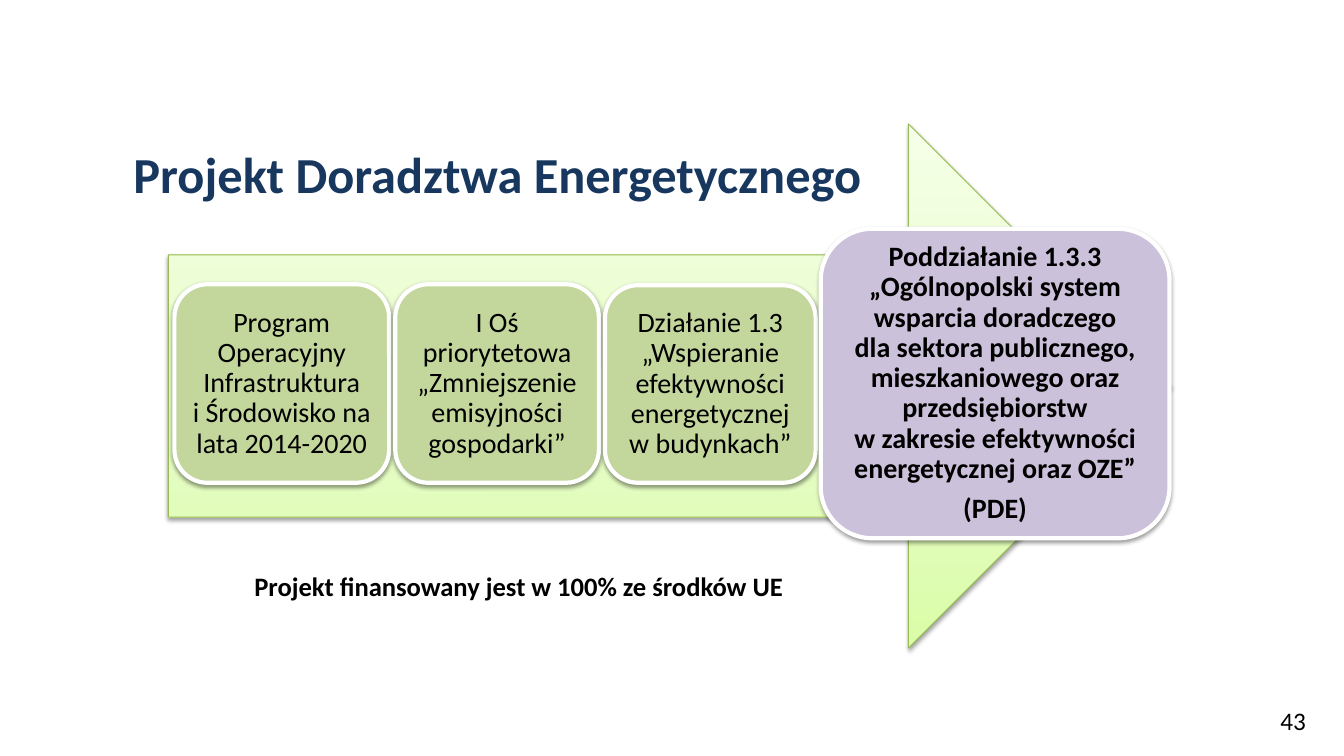
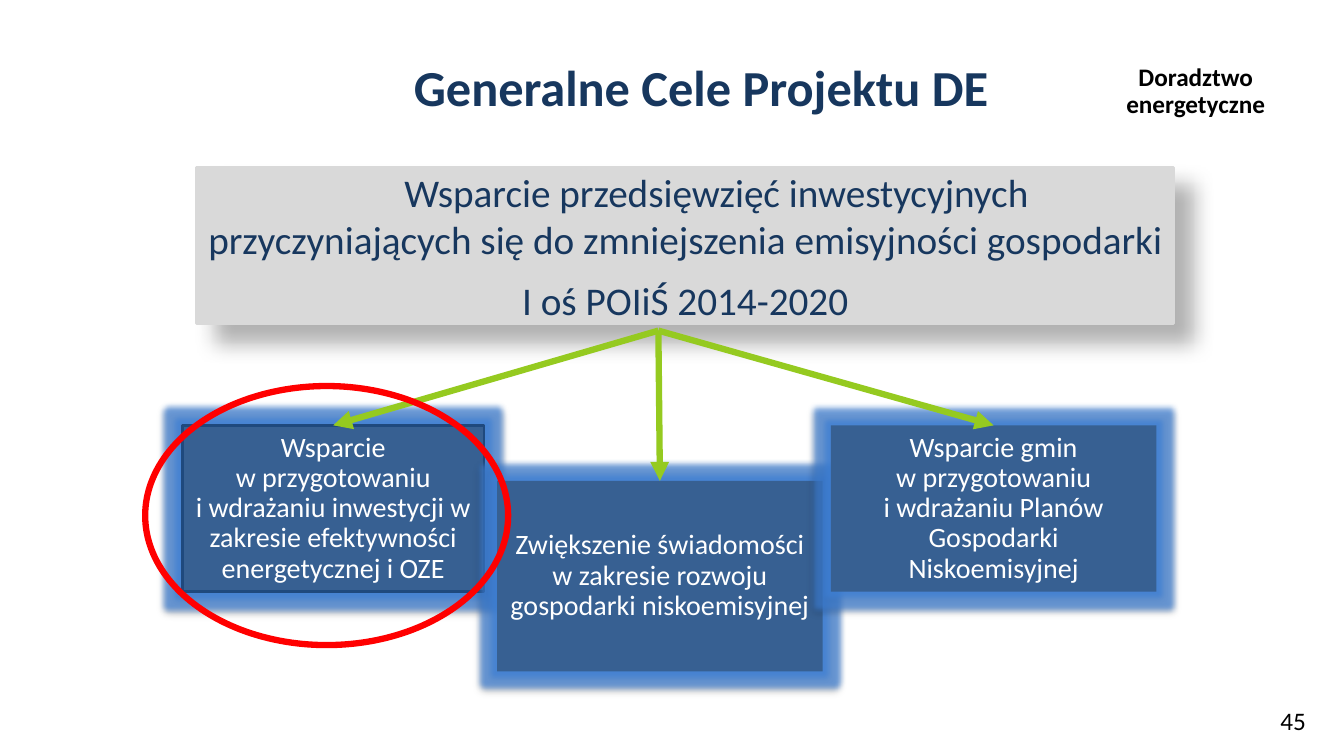
from lxml import etree
from copy import deepcopy
from pptx import Presentation
from pptx.dml.color import RGBColor
from pptx.enum.shapes import MSO_CONNECTOR as Connector, MSO_SHAPE as Shape
from pptx.enum.text import MSO_ANCHOR as Anchor, PP_ALIGN as Align
from pptx.oxml import parse_xml
from pptx.oxml.ns import nsdecls, qn
from pptx.util import Inches, Pt

FONT = "Calibri"
NAVY, BLACK, WHITE = "17375E", "000000", "FFFFFF"
GREEN, PURPLE, BLUE, GREY = "C3D69B", "CCC1DA", "376092", "D9D9D9"
SOFT_SHADOW = (38, 3.1, 1.6, 90)
BOX_SHADOW = (32, 3.5, 2.2, 90)
BAR_SHADOW = (30, 15, 18, 45)
GLOW = '<a:glow rad="101600"><a:srgbClr val="3D7FD5"><a:alpha val="70000"/></a:srgbClr></a:glow>'
rgb = RGBColor.from_string


def write(shape, paragraphs, size, color=BLACK, bold=False, align=Align.CENTER,
          anchor=Anchor.MIDDLE, spacing=1.0, after=0):
    frame = shape.text_frame
    frame.word_wrap = True
    frame.vertical_anchor = anchor
    for index, text in enumerate(paragraphs):
        para = frame.add_paragraph() if index else frame.paragraphs[0]
        para.text = text
        para.alignment = align
        para.line_spacing = spacing
        para.space_after = Pt(after)
        para.font.name, para.font.size, para.font.bold = FONT, Pt(size), bold
        para.font.color.rgb = rgb(color)


def add_effects(shape, opacity, blur, distance, angle, glow=""):
    """Give a shape an outer shadow (percent, points, points, degrees) and an optional glow."""
    shape._element.spPr.append(parse_xml(
        f'<a:effectLst {nsdecls("a")}>{glow}<a:outerShdw blurRad="{Pt(blur)}" dist="{Pt(distance)}" '
        f'dir="{angle * 60000}" algn="ctr" rotWithShape="0"><a:srgbClr val="000000">'
        f'<a:alpha val="{opacity * 1000}"/></a:srgbClr></a:outerShdw></a:effectLst>'))


deck = Presentation()
deck.slide_width, deck.slide_height = Inches(13.33), Inches(7.5)

# Titles and page numbers
pages = []
for title, place, number in (
    ("Projekt Doradztwa Energetycznego", (0.77, 1.09, 8.33, 1.25), "43"),
    ("Generalne Cele Projektu DE", (2.79, 0.47, 8.33, 0.78), "45"),
):
    page = deck.slides.add_slide(deck.slide_layouts[6])
    pages.append(page)
    write(page.shapes.add_textbox(*map(Inches, place)), [title], 36, NAVY, True)
    number_box = page.shapes.add_textbox(*map(Inches, (12.6, 6.95, 0.74, 0.4)))
    write(number_box, [number], 18, align=Align.LEFT, anchor=Anchor.TOP)
project_page, goals_page = pages

# Project: funding path on a wide arrow
shapes = project_page.shapes
arrow = shapes.add_shape(Shape.RIGHT_ARROW, *map(Inches, (1.67, 1.23, 9.94, 5.2)))
arrow.fill.gradient()
arrow.fill.gradient_angle = 90
stop_list = arrow._element.spPr.find(".//" + qn("a:gsLst"))
stop_list.append(deepcopy(stop_list[0]))
for stop, (position, color) in zip(arrow.fill.gradient_stops,
                                   ((0, "DAFDA7"), (0.35, "E4FCC2"), (1, "F5FFE7"))):
    stop.position = position
    stop.color.rgb = rgb(color)
arrow.line.color.rgb = rgb("98B955")
arrow.line.width = Pt(0.75)
add_effects(arrow, *SOFT_SHADOW)

for place, color, bold, paragraphs in (
    ((1.73, 2.82, 2.13, 1.97), GREEN, False,
     ["Program Operacyjny Infrastruktura\ni Środowisko na lata 2014-2020"]),
    ((3.92, 2.82, 2.02, 1.97), GREEN, False,
     ["I Oś priorytetowa „Zmniejszenie emisyjności gospodarki”"]),
    ((6, 2.83, 2.09, 1.96), GREEN, False,
     ["Działanie 1.3 „Wspieranie efektywności energetycznej\nw budynkach”"]),
    ((8.14, 2.27, 3.46, 3.07), PURPLE, True,
     ["Poddziałanie 1.3.3 „Ogólnopolski system wsparcia doradczego\n"
      "dla sektora publicznego, mieszkaniowego oraz przedsiębiorstw\n"
      "w zakresie efektywności energetycznej oraz OZE”", "(PDE)"]),
):
    step = shapes.add_shape(Shape.ROUNDED_RECTANGLE, *map(Inches, place))
    step.fill.solid()
    step.fill.fore_color.rgb = rgb(color)
    step.line.color.rgb = rgb(WHITE)
    step.line.width = Pt(3)
    add_effects(step, *SOFT_SHADOW)
    frame = step.text_frame
    frame.margin_left = frame.margin_right = frame.margin_top = frame.margin_bottom = Inches(0.04)
    write(step, paragraphs, 20, bold=bold, spacing=0.9, after=7)

funding = shapes.add_textbox(*map(Inches, (1.68, 5.6, 6.93, 0.42)))
write(funding, ["Projekt finansowany jest w 100% ze środków UE"], 19, bold=True, anchor=Anchor.TOP)

# Goals: main goal above three supporting goals
shapes = goals_page.shapes
main_goal = shapes.add_shape(Shape.RECTANGLE, *map(Inches, (1.95, 1.66, 9.69, 1.55)))
main_goal.fill.solid()
main_goal.fill.fore_color.rgb = rgb(GREY)
main_goal.line.color.rgb = rgb(GREY)
main_goal.line.width = Pt(2)
add_effects(main_goal, *BAR_SHADOW)
main_goal.text_frame.margin_left = main_goal.text_frame.margin_right = Inches(0.05)
write(main_goal, ["Wsparcie przedsięwzięć inwestycyjnych\n"
                  "przyczyniających się do zmniejszenia emisyjności gospodarki",
                  "I oś POIiŚ 2014-2020"], 28, NAVY, after=10)
first_line = main_goal.text_frame.paragraphs[0]._p.get_or_add_pPr()
first_line.set("marL", "0")
first_line.set("indent", str(Inches(0.62)))

goals = []
for place, outline, text in (
    ((1.81, 4.22, 2.99, 1.65), "1F497D",
     "Wsparcie\nw przygotowaniu\ni wdrażaniu inwestycji w zakresie efektywności energetycznej i OZE"),
    ((4.93, 4.77, 3.23, 1.89), None,
     "Zwiększenie świadomości w zakresie rozwoju gospodarki niskoemisyjnej"),
    ((8.24, 4.22, 3.23, 1.65), None,
     "Wsparcie gmin\nw przygotowaniu\ni wdrażaniu Planów Gospodarki Niskoemisyjnej"),
):
    goal = shapes.add_shape(Shape.RECTANGLE, *map(Inches, place))
    goal.fill.solid()
    goal.fill.fore_color.rgb = rgb(BLUE)
    if outline:
        goal.line.color.rgb = rgb(outline)
        goal.line.width = Pt(2)
    else:
        goal.line.fill.background()
    add_effects(goal, *BOX_SHADOW, glow=GLOW)
    write(goal, [text], 20, WHITE, spacing=0.9, after=7)
    goals.append(goal)

for goal in goals:
    link = shapes.add_connector(Connector.STRAIGHT, Inches(6.53), Inches(3.28), goal.left, goal.top)
    link.end_connect(goal, 0)
    link.line.color.rgb = rgb("95CA20")
    link.line.width = Pt(4.5)
    etree.SubElement(link.line._get_or_add_ln(), qn("a:tailEnd"), type="triangle")
    etree.SubElement(link._element.spPr, qn("a:effectLst"))

highlight = shapes.add_shape(Shape.OVAL, *map(Inches, (1.44, 3.83, 3.6, 2.57)))
highlight.shadow.inherit = False
highlight.fill.background()
highlight.line.color.rgb = rgb("FF0000")
highlight.line.width = Pt(4.5)

topic = shapes.add_textbox(*map(Inches, (10.68, 0.59, 2.36, 0.65)))
write(topic, ["Doradztwo energetyczne"], 18, bold=True, anchor=Anchor.TOP, spacing=0.9, after=6)

deck.save("out.pptx")
